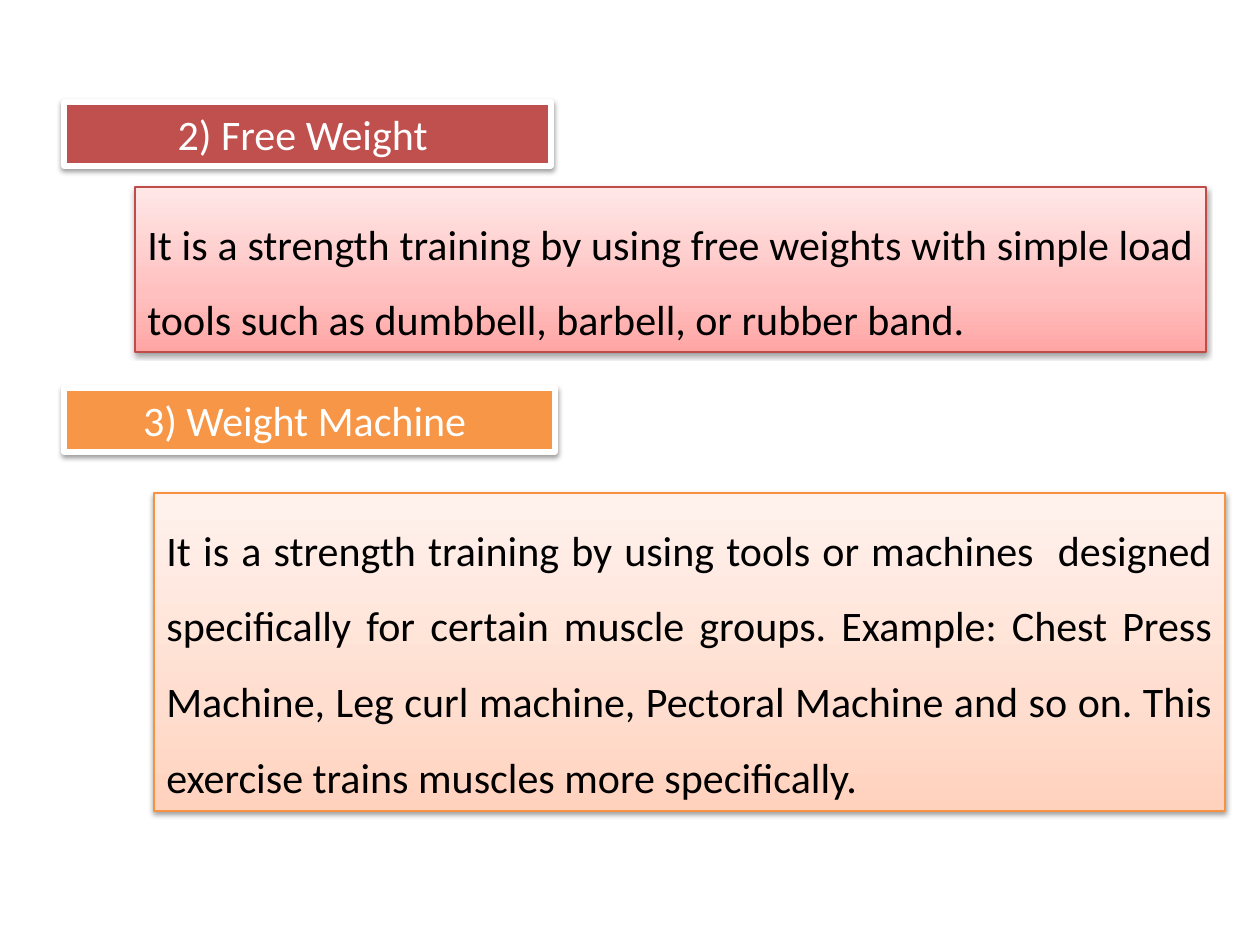
from dataclasses import dataclass

from lxml.etree import SubElement
from pptx import Presentation
from pptx.dml.color import RGBColor as Rgb
from pptx.enum.shapes import MSO_SHAPE as Shape
from pptx.enum.text import MSO_ANCHOR as Anchor, MSO_AUTO_SIZE as AutoSize, PP_ALIGN as Align
from pptx.oxml.ns import qn
from pptx.util import Emu, Pt

EMU_PER_PX = 914400 / 126


def px(length):
    return Emu(round(length * EMU_PER_PX))


@dataclass(frozen=True)
class Theme:
    font: str = "Calibri"
    size: int = 24
    dark: str = "000000"
    light: str = "FFFFFF"
    red: str = "C0504D"
    red_edge: str = "BF4C48"
    red_fade: tuple = ("FFA6A5", "FFC0BF", "FFE7E7")
    orange: str = "F79646"
    orange_edge: str = "F69240"
    orange_fade: tuple = ("FFD2BD", "FFDED0", "FFF2ED")
    fade_stops: tuple = (0, 35, 100)
    heading_line: float = 3
    panel_line: float = 0.75


class SlideBuilder:
    def __init__(self, page, theme):
        self.page = page
        self.theme = theme

    def box(self, text, frame, edge, line_width, color, align, spacing=1.0):
        box = self.page.shapes.add_shape(Shape.RECTANGLE, *map(px, frame))
        box.line.color.rgb = Rgb.from_string(edge)
        box.line.width = Pt(line_width)
        self.drop_shadow(box)
        text_frame = box.text_frame
        text_frame.text = text
        text_frame.word_wrap = True
        text_frame.auto_size = AutoSize.SHAPE_TO_FIT_TEXT
        text_frame.vertical_anchor = Anchor.TOP
        para = text_frame.paragraphs[0]
        para.alignment = align
        para.line_spacing = spacing
        for span in para.runs:
            span.font.name = self.theme.font
            span.font.size = Pt(self.theme.size)
            span.font.color.rgb = Rgb.from_string(color)
        return box

    def drop_shadow(self, box):
        box.shadow.inherit = False
        effects = box._element.spPr.find(qn("a:effectLst"))
        shadow = SubElement(effects, qn("a:outerShdw"), blurRad="40000", dist="20000",
                            dir="5400000", rotWithShape="0")
        color = SubElement(shadow, qn("a:srgbClr"), val=self.theme.dark)
        SubElement(color, qn("a:alpha"), val="38000")

    def heading(self, text, frame, fill):
        theme = self.theme
        box = self.box(text, frame, theme.light, theme.heading_line, theme.light, Align.CENTER)
        box.fill.solid()
        box.fill.fore_color.rgb = Rgb.from_string(fill)

    def panel(self, text, frame, edge, fade):
        theme = self.theme
        box = self.box(text, frame, edge, theme.panel_line, theme.dark, Align.JUSTIFY, 1.5)
        box.fill.gradient()
        box.fill.gradient_angle = 90
        stops = box._element.spPr.find(qn("a:gradFill")).find(qn("a:gsLst"))
        for stop in list(stops):
            stops.remove(stop)
        for position, color in zip(theme.fade_stops, fade):
            stop = SubElement(stops, qn("a:gs"), pos=str(position * 1000))
            SubElement(stop, qn("a:srgbClr"), val=color)


def main():
    deck = Presentation()
    deck.slide_width, deck.slide_height = px(1260), px(945)
    theme = Theme()
    builder = SlideBuilder(deck.slides.add_slide(deck.slide_layouts[6]), theme)
    builder.panel(
        "It is a strength training by using free weights with simple load tools "
        "such as dumbbell, barbell, or rubber band.",
        (135, 187, 1071, 165), theme.red_edge, theme.red_fade)
    builder.heading("2) Free Weight ", (64, 102, 487, 64), theme.red)
    builder.heading("3) Weight Machine ", (64, 388, 491, 64), theme.orange)
    builder.panel(
        "It is a strength training by using tools or machines  designed specifically "
        "for certain muscle groups. Example: Chest Press Machine, Leg curl machine, "
        "Pectoral Machine and so on. This exercise trains muscles more specifically.",
        (154, 493, 1071, 318), theme.orange_edge, theme.orange_fade)
    deck.save("out.pptx")


if __name__ == "__main__":
    main()
